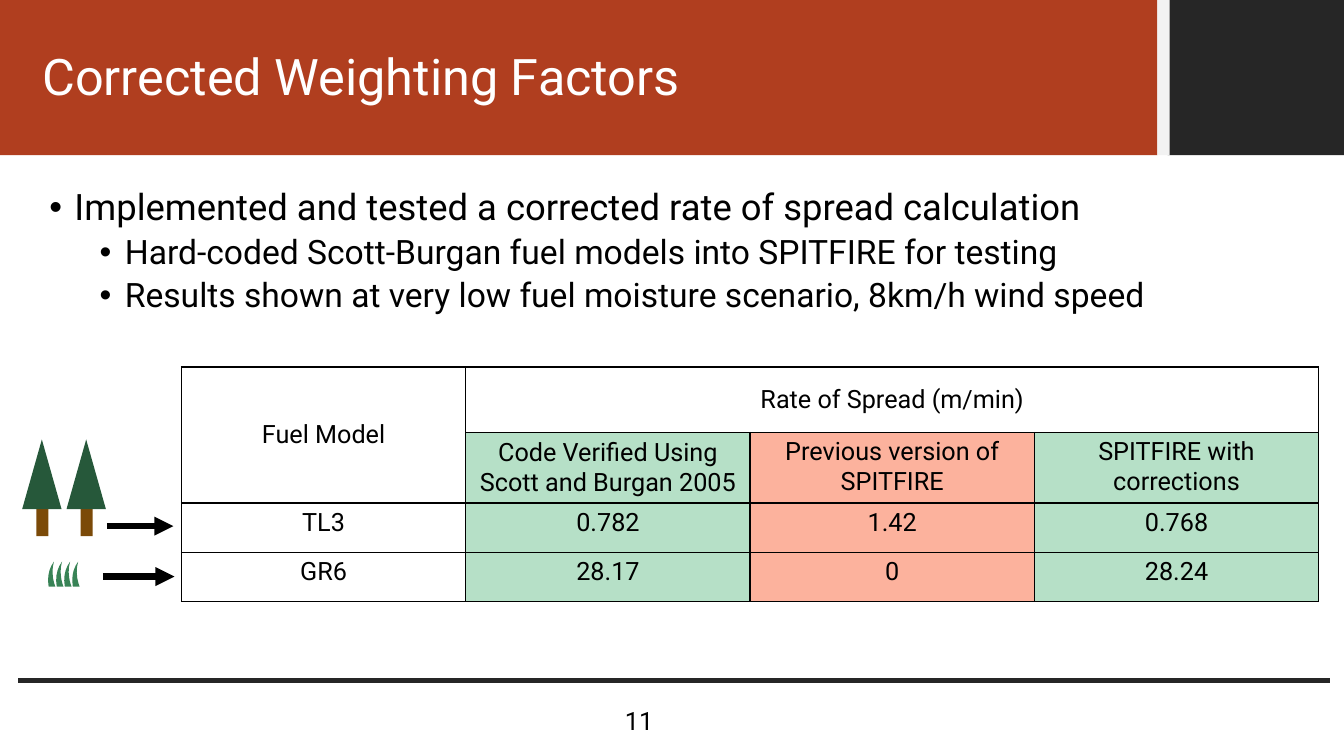
from lxml.etree import SubElement as Sub
from pptx import Presentation
from pptx.dml.color import RGBColor as Rgb
from pptx.enum.shapes import MSO_CONNECTOR as Conn, MSO_SHAPE as Kind
from pptx.enum.text import MSO_ANCHOR as Anchor, MSO_AUTO_SIZE as Auto, PP_ALIGN as Align
from pptx.oxml.ns import qn
from pptx.util import Pt

PX = 9144  # 100 px to the inch
FONT = "Roboto"
COLORS = {
    "rust": "B03E1F", "dark": "262626", "pale": "F2F2F2",
    "white": "FFFFFF", "black": "000000",
    "mint": "B6E0C7", "salmon": "FCB29D",
    "trunk": "7B4A08", "pine": "26583A", "grass": "388356",
}
BULLETS = [
    (0, "Implemented and tested a corrected rate of spread calculation"),
    (1, "Hard-coded Scott-Burgan fuel models into SPITFIRE for testing"),
    (1, "Results shown at very low fuel moisture scenario, 8km/h wind speed"),
]
ROWS = [
    ["Fuel Model", "Rate of Spread (m/min)", "", ""],
    ["", "Code Verified Using Scott and Burgan 2005",
     "Previous version of SPITFIRE", "SPITFIRE with corrections"],
    ["TL3", "0.782", "1.42", "0.768"],
    ["GR6", "28.17", "0", "28.24"],
]
FILLS = ["white", "mint", "salmon", "mint"]


def emu(*vals):
    return [val * PX for val in vals]


def rgb(name):
    return Rgb.from_string(COLORS[name])


def style(para, size, color="black"):
    for run in para.runs:
        run.font.name = FONT
        run.font.size = Pt(size)
        run.font.color.rgb = rgb(color)


def add_block(shapes, box, color, kind=Kind.RECTANGLE):
    block = shapes.add_shape(kind, *emu(*box))
    block.shadow.inherit = False
    block.fill.solid()
    block.fill.fore_color.rgb = rgb(color)
    block.line.fill.background()
    return block


def add_line(shapes, ends, color, width, arrow=False):
    line = shapes.add_connector(Conn.STRAIGHT, *emu(*ends))
    line.line.color.rgb = rgb(color)
    line.line.width = Pt(width)
    if arrow:
        Sub(line.line._get_or_add_ln(), qn("a:tailEnd"), type="triangle")
    Sub(line._element.spPr, qn("a:effectLst"))


def set_title(slide, text):
    title = slide.shapes.title
    title.left, title.top, title.width, title.height = emu(32, 20, 1051, 118)
    frame = title.text_frame
    frame.text = text
    frame.auto_size = Auto.NONE
    frame.vertical_anchor = Anchor.MIDDLE
    para = frame.paragraphs[0]
    para.alignment = Align.LEFT
    para.line_spacing = 0.9
    style(para, 36, "white")
    slide.shapes._spTree.append(title._element)  # in front of the banner


def add_bullets(shapes, box, items):
    frame = shapes.add_textbox(*emu(*box)).text_frame
    frame.word_wrap = True
    for num, (level, text) in enumerate(items):
        para = frame.add_paragraph() if num else frame.paragraphs[0]
        para.text = text
        para.level = level
        para.line_spacing = 0.9
        if num:
            para.space_before = Pt(5)
        props = para._p.get_or_add_pPr()
        props.set("marL", str((25 + 50 * level) * PX))
        props.set("indent", str(-25 * PX))
        Sub(props, qn("a:buFont"), typeface="Arial")
        Sub(props, qn("a:buChar"), char="•")
        style(para, 24 if level else 26)


def add_number(shapes, box, text):
    frame = shapes.add_textbox(*emu(*box)).text_frame
    frame.word_wrap = True
    frame.text = text
    style(frame.paragraphs[0], 18)


def set_border(cell):
    props = cell._tc.get_or_add_tcPr()
    for num, side in enumerate(("lnL", "lnR", "lnT", "lnB")):
        edge = props.makeelement(qn("a:" + side), {"w": str(Pt(1))})
        fill = Sub(edge, qn("a:solidFill"))
        Sub(fill, qn("a:srgbClr"), val=COLORS["black"])
        props.insert(num, edge)


def add_grid(shapes, box, highs):
    grid = shapes.add_table(len(ROWS), len(FILLS), *emu(*box)).table
    grid.first_row = grid.horz_banding = False
    for row, high in zip(grid.rows, highs):
        row.height = high * PX
    for r, texts in enumerate(ROWS):
        for c, text in enumerate(texts):
            cell = grid.cell(r, c)
            cell.text = text
            cell.fill.solid()
            cell.fill.fore_color.rgb = rgb(FILLS[c] if r else "white")
            if r == 0 or (r, c) == (1, 1):
                cell.vertical_anchor = Anchor.MIDDLE
            para = cell.text_frame.paragraphs[0]
            para.alignment = Align.CENTER
            style(para, 18)
            set_border(cell)
    grid.cell(0, 0).merge(grid.cell(1, 0))
    grid.cell(0, 1).merge(grid.cell(0, 3))


def add_tree(shapes, left, top):
    tree = shapes.add_group_shape().shapes
    add_block(tree, (left + 14, top + 69, 12, 27), "trunk")
    add_block(tree, (left, top, 39, 69), "pine", Kind.ISOSCELES_TRIANGLE)


def add_grass(shapes, left, top):
    tuft = shapes.add_group_shape().shapes
    for num in range(4):
        blade = add_block(tuft, (left + 8 * num, top, 37, 101), "grass", Kind.MOON)
        blade.adjustments[0] = 0.235
        blade.rotation = 307.3
    # Ground hides the lower part of the blades
    add_block(tuft, (left - 21, top + 30, 115, 66), "white")


def main():
    deck = Presentation()
    deck.slide_width, deck.slide_height = emu(1333, 750)
    slide = deck.slides.add_slide(deck.slide_layouts[5])
    shapes = slide.shapes

    # Banner and footer rule
    add_block(shapes, (-1, -1, 1149, 155), "rust")
    add_block(shapes, (1158, -1, 176, 155), "dark")
    add_block(shapes, (1148, -1, 12, 155), "pale")
    add_line(shapes, (18, 675, 1319, 675), "dark", 3)

    # Text and table
    set_title(slide, "Corrected Weighting Factors")
    add_bullets(shapes, (39, 183, 1179, 170), BULLETS)
    add_grid(shapes, (180, 364, 1128, 232), (65, 68, 49, 49))
    add_number(shapes, (610, 695, 54, 40), "11")

    # Fuel pictures with arrows to their rows
    for left in (66, 22):
        add_tree(shapes, left, 436)
    add_line(shapes, (106, 522, 172, 522), "black", 4.5, arrow=True)
    add_grass(shapes, 64, 552)
    add_line(shapes, (102, 572, 173, 572), "black", 4.5, arrow=True)

    deck.save("out.pptx")


if __name__ == "__main__":
    main()
